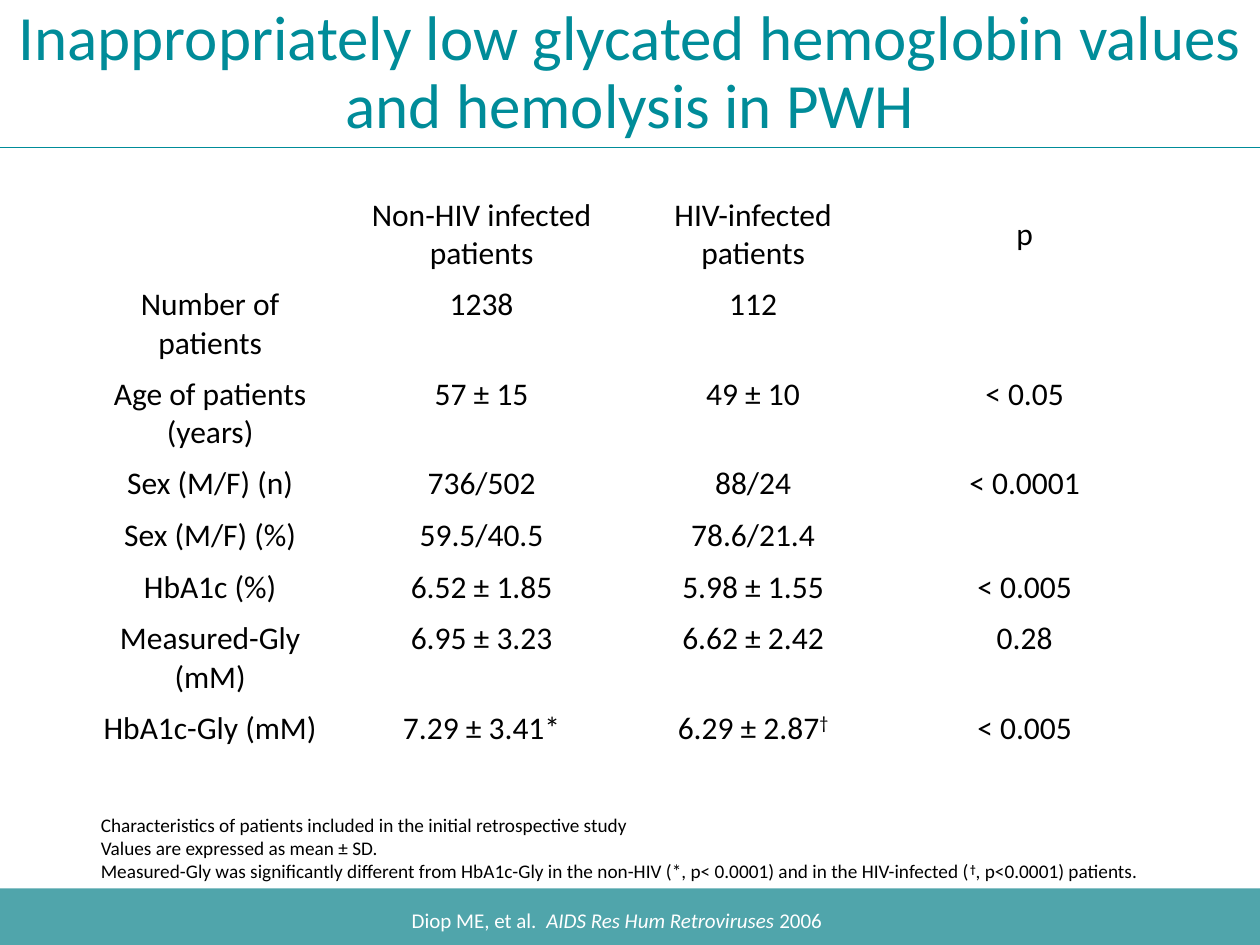
from dataclasses import dataclass

from lxml.etree import SubElement
from pptx import Presentation
from pptx.dml.color import RGBColor
from pptx.enum.shapes import MSO_CONNECTOR, MSO_SHAPE
from pptx.enum.text import MSO_ANCHOR, PP_ALIGN
from pptx.oxml.ns import qn
from pptx.util import Inches, Pt


@dataclass(frozen=True)
class Theme:
    """Colours and type sizes of the slide."""
    font: str = "Calibri"
    teal: RGBColor = RGBColor(0x00, 0x8C, 0x99)
    band: RGBColor = RGBColor(0x50, 0xA5, 0xAB)
    black: RGBColor = RGBColor(0, 0, 0)
    white: RGBColor = RGBColor(255, 255, 255)
    title: Pt = Pt(36)
    body: Pt = Pt(18)
    note: Pt = Pt(11)
    source: Pt = Pt(12)


THEME = Theme()
WIDTH, HEIGHT = Inches(10), Inches(7.5)
TITLE_SHARE, FOOTER_SHARE = 0.156, 0.06
ONE_LINE, TWO_LINES = Inches(0.41), Inches(0.71)
RAISED = {"baseline": "30000"}

PATIENTS = [
    (TWO_LINES, ["", "Non-HIV infected patients", "HIV-infected patients", "p"]),
    (TWO_LINES, ["Number of patients", "1238", "112", ""]),
    (TWO_LINES, ["Age of patients (years)", "57 ± 15", "49 ± 10", "< 0.05"]),
    (ONE_LINE, ["Sex (M/F) (n)", "736/502", "88/24", "< 0.0001"]),
    (ONE_LINE, ["Sex (M/F) (%)", "59.5/40.5", "78.6/21.4", ""]),
    (ONE_LINE, ["HbA1c (%)", "6.52 ± 1.85", "5.98 ± 1.55", "< 0.005"]),
    (TWO_LINES, ["Measured-Gly (mM)", "6.95 ± 3.23", "6.62 ± 2.42", "0.28"]),
    (ONE_LINE, ["HbA1c-Gly (mM)", "7.29 ± 3.41*",
                [("6.29 ± 2.87", {}), ("†", RAISED)], "< 0.005"]),
]
NOTES = [
    "Characteristics of patients included in the initial retrospective study",
    "Values are expressed as mean ± SD.",
    [("Measured-Gly was significantly different from HbA1c-Gly in the non-HIV "
      "(*, p< 0.0001) and in the HIV-infected (", {}),
     ("†", {"b": "1", **RAISED}),
     (", p<0.0001) patients.", {})],
]
SOURCE = [("Diop ME, et al.\u00a0\u00a0", {}),
          ("AIDS Res Hum Retroviruses ", {"i": "1"}), ("2006", {})]


def apply(target, values):
    """Set each named attribute of the target."""
    for name, value in values.items():
        setattr(target, name, value)


def write(frame, lines, size, color, **paragraph_format):
    """Fill a text frame with lines, each a string or a list of formatted runs."""
    for index, line in enumerate(lines):
        paragraph = frame.add_paragraph() if index else frame.paragraphs[0]
        apply(paragraph, paragraph_format)
        for text, marks in [(line, {})] if isinstance(line, str) else line:
            run = paragraph.add_run()
            run.text = text
            apply(run.font, {"name": THEME.font, "size": size, "bold": False})
            run.font.color.rgb = color
            for name, value in marks.items():
                run._r.get_or_add_rPr().set(name, value)


def add_text(slide, box, lines, size, color, frame_format, **paragraph_format):
    """Add a wrapping text box."""
    frame = slide.shapes.add_textbox(*box).text_frame
    apply(frame, {"word_wrap": True, **frame_format})
    write(frame, lines, size, color, **paragraph_format)


def add_footer_band(slide):
    """Add the coloured band along the foot of the slide."""
    depth = int(HEIGHT * FOOTER_SHARE)
    band = slide.shapes.add_shape(MSO_SHAPE.RECTANGLE, 0, HEIGHT - depth, WIDTH, depth)
    band.shadow.inherit = False
    band.fill.solid()
    band.fill.fore_color.rgb = THEME.band
    band.line.fill.background()


def add_title_rule(slide, top):
    """Add the thin rule below the title."""
    rule = slide.shapes.add_connector(MSO_CONNECTOR.STRAIGHT, 0, top, WIDTH, top)
    rule.line.color.rgb = THEME.teal
    rule.line.width = Pt(0.5)
    SubElement(rule._element.spPr, qn("a:effectLst"))


def add_patient_table(slide, left, top, width):
    """Add the unfilled table of patient characteristics."""
    columns = len(PATIENTS[0][1])
    total = sum(height for height, _ in PATIENTS)
    table = slide.shapes.add_table(len(PATIENTS), columns, left, top, width, total).table
    apply(table, {"first_row": False, "horz_banding": False})
    for row, (height, values) in enumerate(PATIENTS):
        table.rows[row].height = height
        for column, value in enumerate(values):
            cell = table.cell(row, column)
            cell.fill.background()
            cell.vertical_anchor = MSO_ANCHOR.TOP if row else MSO_ANCHOR.MIDDLE
            if value:
                write(cell.text_frame, [value], THEME.body, THEME.black,
                      alignment=PP_ALIGN.CENTER)


def main():
    """Build the slide and save it."""
    deck = Presentation()
    apply(deck, {"slide_width": WIDTH, "slide_height": HEIGHT})
    slide = deck.slides.add_slide(deck.slide_layouts[6])
    title_depth = int(HEIGHT * TITLE_SHARE)
    add_footer_band(slide)
    add_title_rule(slide, title_depth)
    add_text(slide, (0, 0, WIDTH, title_depth),
             ["Inappropriately low glycated hemoglobin values and hemolysis in PWH"],
             THEME.title, THEME.teal, {"vertical_anchor": MSO_ANCHOR.MIDDLE},
             alignment=PP_ALIGN.CENTER, line_spacing=0.9)
    add_patient_table(slide, Inches(0.59), Inches(1.51), Inches(8.62))
    add_text(slide, (Inches(0.8), Inches(6.23), Inches(8.53), Inches(0.89)),
             NOTES, THEME.note, THEME.black,
             {"vertical_anchor": MSO_ANCHOR.MIDDLE, "margin_left": 0, "margin_right": 0,
              "margin_top": Inches(0.22), "margin_bottom": Inches(0.11)})
    add_text(slide, (Inches(1.44), Inches(7.15), Inches(6.91), Inches(0.3)),
             [SOURCE], THEME.source, THEME.white, {}, alignment=PP_ALIGN.CENTER)
    deck.save("out.pptx")


if __name__ == "__main__":
    main()
